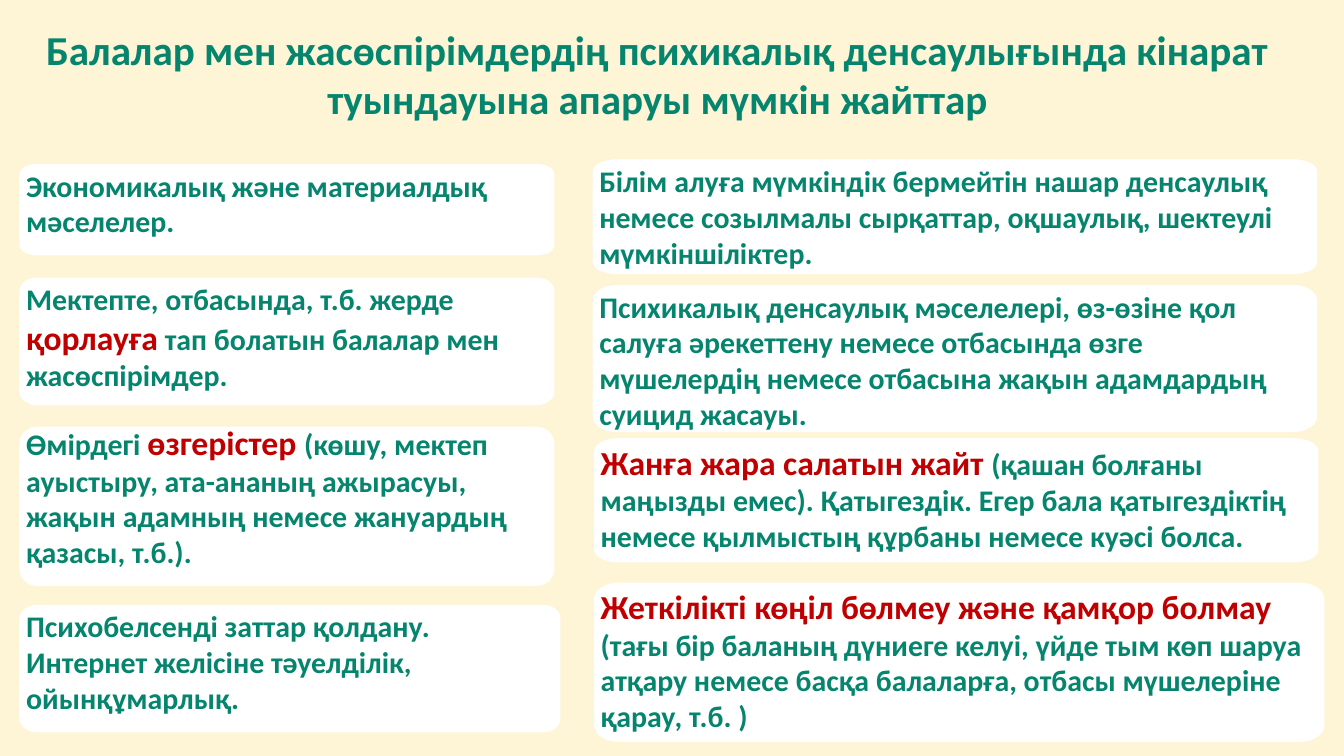
from lxml.etree import SubElement
from pptx import Presentation
from pptx.dml.color import RGBColor
from pptx.enum.text import MSO_ANCHOR, MSO_AUTO_SIZE, PP_ALIGN
from pptx.oxml.ns import qn
from pptx.util import Inches, Pt

FONT = "Calibri"
CREAM = "FEF4D6"
WHITE = "FFFFFF"
GREEN = "05856D"
RED = "C00000"
ARC = 0.55

TITLE = ("Балалар мен жасөспірімдердің психикалық денсаулығында кінарат "
         "туындауына апаруы мүмкін жайттар")

LEFT_X, RIGHT_X = 0.29, 8.82
LEFT_W, RIGHT_W = 7.96, 10.78

FACTORS = [
    (LEFT_X, 9, 8.05, 1.9, [
        ("Психобелсенді заттар қолдану. Интернет желісіне тәуелділік, ойынқұмарлық.", False)]),
    (LEFT_X, 4.13, LEFT_W, 1.9, [
        ("Мектепте, отбасында, т.б. жерде ", False),
        ("қорлауға", True),
        (" тап болатын балалар мен жасөспірімдер.", False)]),
    (LEFT_X, 2.44, LEFT_W, 1.36, [("Экономикалық және материалдық мәселелер.", False)]),
    (LEFT_X, 6.35, LEFT_W, 2.37, [
        ("Өмірдегі ", False),
        ("өзгерістер ", True),
        ("(көшу, мектеп ауыстыру, ата-ананың ажырасуы, жақын адамның немесе жануардың "
         "қазасы, т.б.).", False)], MSO_ANCHOR.MIDDLE, 0.36),
    (RIGHT_X, 4.24, RIGHT_W, 2.19, [
        ("Психикалық денсаулық мәселелері, өз-өзіне қол салуға әрекеттену немесе отбасында "
         "өзге мүшелердің немесе отбасына жақын адамдардың суицид жасауы.", False)]),
    (RIGHT_X, 2.37, RIGHT_W, 1.71, [
        ("Білім алуға мүмкіндік бермейтін нашар денсаулық немесе созылмалы сырқаттар, "
         "оқшаулық, шектеулі мүмкіншіліктер.", False)]),
    (8.84, 8.67, 10.87, 2.37, [
        ("Жеткілікті көңіл бөлмеу және қамқор болмау ", True),
        ("(тағы бір баланың дүниеге келуі, үйде тым көп шаруа атқару немесе басқа балаларға, "
         "отбасы мүшелеріне қарау, т.б. )", False)]),
    (8.84, 6.52, RIGHT_W, 1.85, [
        ("Жанға жара салатын жайт ", True),
        ("(қашан болғаны маңызды емес). Қатыгездік. Егер бала қатыгездіктің немесе "
         "қылмыстың құрбаны немесе куәсі болса.", False)]),
]


def color(value):
    return RGBColor.from_string(value)


def corner_ends(left, top, width, height):
    rx, ry = 0.034 * width, 0.104 * height
    right, bottom = left + width, top + height
    ends = [(right - rx, bottom), (left + rx, bottom), (left, bottom - ry),
            (left, top + ry), (left + rx, top), (right - rx, top),
            (right, top + ry), (right, bottom - ry), (right - rx, bottom)]
    return [(Inches(x), Inches(y)) for x, y in ends]


def round_corners(panel):
    width, height = panel.width, panel.height
    corners = [(0, height), (0, 0), (width, 0), (width, height)]
    segments = list(panel.element.iter(qn("a:lnTo")))
    for corner, before, segment in zip(corners, segments[::2], segments[1::2]):
        arc_start, arc_end = (
            (int(step[0].get("x")), int(step[0].get("y"))) for step in (before, segment))
        segment.tag = qn("a:cubicBezTo")
        for position, end in enumerate((arc_start, arc_end)):
            x, y = (round(e + ARC * (c - e)) for e, c in zip(end, corner))
            control = SubElement(segment, qn("a:pt"), x=str(x), y=str(y))
            segment.insert(position, control)


class FactorSlide:
    def __init__(self, presentation):
        self.slide = presentation.slides.add_slide(presentation.slide_layouts[5])
        background = self.slide.background.fill
        background.solid()
        background.fore_color.rgb = color(CREAM)

    def style(self, run, size, hue):
        run.font.name = FONT
        run.font.size = Pt(size)
        run.font.bold = True
        run.font.color.rgb = color(hue)

    def title(self, wording, left, top, width, height):
        heading = self.slide.shapes.title
        heading.left, heading.top = Inches(left), Inches(top)
        heading.width, heading.height = Inches(width), Inches(height)
        frame = heading.text_frame
        frame.text = wording
        frame.auto_size = MSO_AUTO_SIZE.NONE
        frame.vertical_anchor = MSO_ANCHOR.MIDDLE
        frame.paragraphs[0].alignment = PP_ALIGN.CENTER
        self.style(frame.paragraphs[0].runs[0], 44, GREEN)

    def card(self, left, top, width, height, phrases,
             anchor=MSO_ANCHOR.TOP, bottom_margin=0.05):
        start, *rest = corner_ends(left, top, width, height)
        builder = self.slide.shapes.build_freeform(*start)
        builder.add_line_segments(rest, close=True)
        panel = builder.convert_to_shape()
        round_corners(panel)
        panel.shadow.inherit = False
        panel.fill.solid()
        panel.fill.fore_color.rgb = color(WHITE)
        panel.line.fill.background()
        frame = panel.text_frame
        frame.word_wrap = True
        frame.vertical_anchor = anchor
        frame.margin_bottom = Inches(bottom_margin)
        paragraph = frame.paragraphs[0]
        paragraph.alignment = PP_ALIGN.LEFT
        for wording, stressed in phrases:
            run = paragraph.add_run()
            run.text = wording
            self.style(run, 36 if stressed else 32, RED if stressed else GREEN)


def main():
    presentation = Presentation()
    presentation.slide_width = Inches(20)
    presentation.slide_height = Inches(11.25)
    page = FactorSlide(presentation)
    page.title(TITLE, -0.01, 0.47, 19.6, 1.25)
    for factor in FACTORS:
        page.card(*factor)
    presentation.save("out.pptx")


if __name__ == "__main__":
    main()
